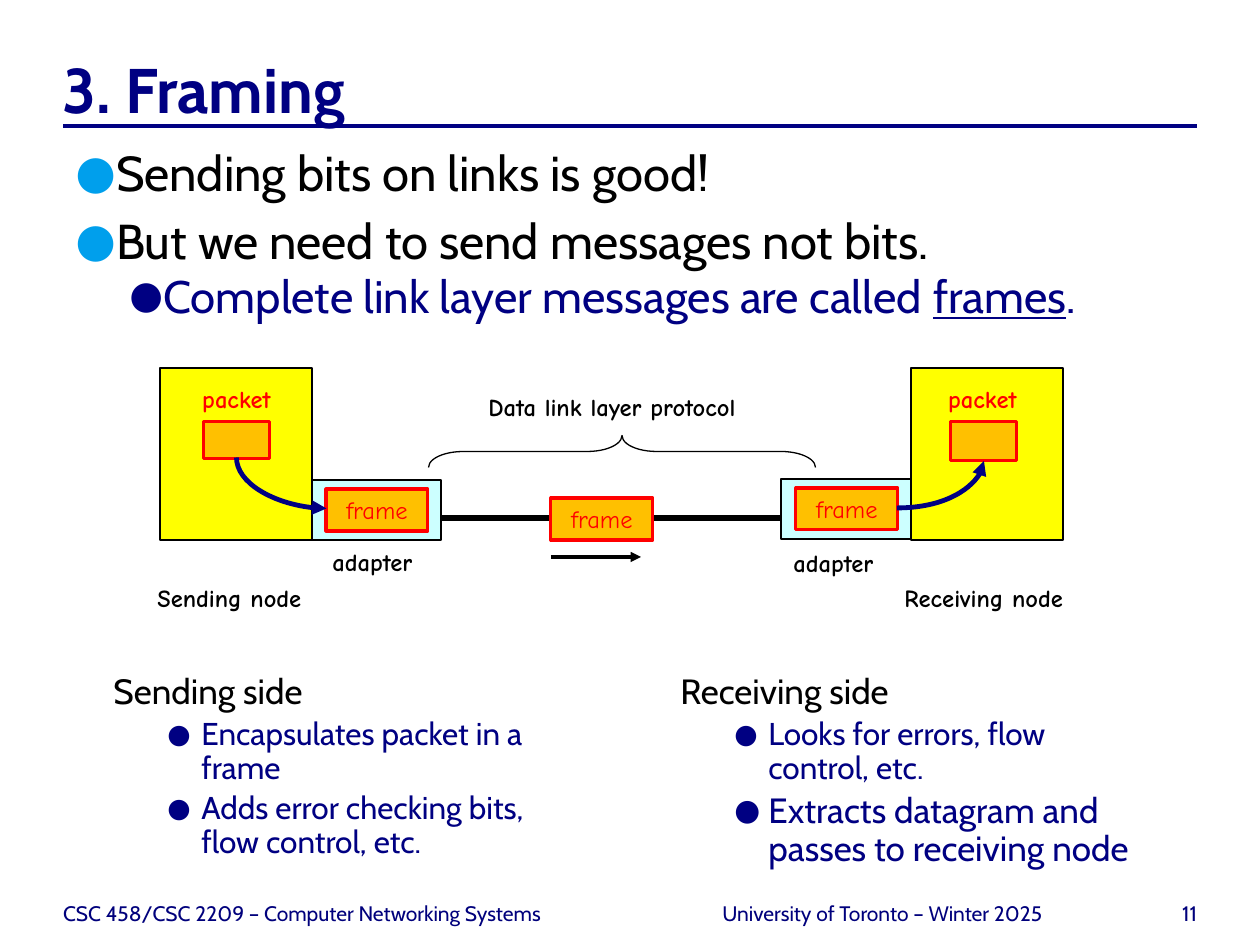
from dataclasses import dataclass
from lxml.etree import SubElement
from pptx import Presentation
from pptx.dml.color import RGBColor
from pptx.enum.shapes import MSO_CONNECTOR as Link, MSO_SHAPE as Shape
from pptx.enum.text import MSO_ANCHOR as Anchor, MSO_AUTO_SIZE as AutoSize, PP_ALIGN as Align
from pptx.oxml.ns import qn
from pptx.util import Pt

PX_PER_INCH = 126


def px(length):
    return round(length * 914400 / PX_PER_INCH)


@dataclass(frozen=True)
class Theme:
    text_font: str = "Cabin"
    label_font: str = "Comic Neue"
    navy: str = "000082"
    footer: str = "00007C"
    black: str = "000000"
    bullet: str = "009FEC"
    node: str = "FFFF00"
    adapter: str = "CCFFFF"
    packet: str = "FFC000"
    red: str = "FF0000"
    title_size: int = 36
    lead_size: int = 28
    point_size: int = 26
    side_size: int = 20
    detail_size: int = 18
    label_size: int = 14
    footer_size: int = 12
    thin: float = 0.75
    medium: float = 1.75
    rule: float = 2.25
    curve: float = 2.75
    thick: float = 3


@dataclass(frozen=True)
class Level:
    margin: int = 0
    hang: int = 0
    color: str = ""
    bullet: str = ""
    bullet_size: int = 0


class SlideBuilder:
    def __init__(self, page, theme):
        self.page = page
        self.theme = theme
        self.lead = Level(38, 38, theme.black, theme.bullet, 95)
        self.point = Level(88, 34, theme.navy, theme.navy, 85)
        self.heading = Level(color=theme.black)

    def style(self, para, font, size, color, bold=False):
        for span in para.runs:
            span.font.name = font
            span.font.size = Pt(size)
            span.font.bold = bold
            span.font.color.rgb = RGBColor.from_string(color)

    def frame_box(self, left, top, width, height):
        box = self.page.shapes.add_textbox(px(left), px(top), px(width), px(height))
        box.text_frame.word_wrap = True
        return box.text_frame

    def flush_text(self, place, text, size, color, align=Align.LEFT, bold=False, inset=0):
        frame = self.frame_box(*place)
        frame.margin_left = frame.margin_right = 0
        frame.margin_top = px(inset)
        frame.margin_bottom = 0
        frame.vertical_anchor = Anchor.BOTTOM
        frame.text = text
        para = frame.paragraphs[0]
        para.alignment = align
        self.style(para, self.theme.text_font, size, color, bold)

    def label(self, place, text, color=None, centered=False):
        frame = self.frame_box(*place)
        frame.auto_size = AutoSize.SHAPE_TO_FIT_TEXT
        frame.word_wrap = not centered
        frame.text = text
        para = frame.paragraphs[0]
        para.alignment = Align.CENTER if centered else Align.LEFT
        self.style(para, self.theme.label_font, self.theme.label_size,
                   color or self.theme.black, True)

    def outline(self, place, items):
        frame = self.frame_box(*place)
        for index, (level, size, spacing, parts) in enumerate(items):
            para = frame.paragraphs[0] if index == 0 else frame.add_paragraph()
            for number, part in enumerate(parts):
                span = para.add_run()
                span.text = part
                span.font.underline = number % 2 == 1
            self.style(para, self.theme.text_font, size, level.color)
            para.line_spacing = spacing
            para.space_before = Pt(size * 0.2)
            if level.bullet:
                self.bullet(para, level)

    def bullet(self, para, level):
        para.level = 1 if level is self.point else 0
        props = para._p.get_or_add_pPr()
        props.set("marL", str(px(level.margin)))
        props.set("indent", str(-px(level.hang)))
        color = SubElement(props, qn("a:buClr"))
        SubElement(color, qn("a:srgbClr"), val=level.bullet)
        SubElement(props, qn("a:buSzPct"), val=str(level.bullet_size * 1000))
        SubElement(props, qn("a:buFont"), typeface=self.theme.text_font)
        SubElement(props, qn("a:buChar"), char="●")

    def rectangle(self, place, fill, line, weight, text=""):
        box = self.page.shapes.add_shape(Shape.RECTANGLE, *map(px, place))
        box.shadow.inherit = False
        box.fill.solid()
        box.fill.fore_color.rgb = RGBColor.from_string(fill)
        box.line.color.rgb = RGBColor.from_string(line)
        box.line.width = Pt(weight)
        if text:
            frame = box.text_frame
            frame.word_wrap = False
            frame.vertical_anchor = Anchor.MIDDLE
            frame.text = text
            frame.paragraphs[0].alignment = Align.CENTER
            self.style(frame.paragraphs[0], self.theme.label_font, self.theme.label_size, line)

    def packet(self, place, text=""):
        self.rectangle(place, self.theme.packet, self.theme.red, self.theme.medium, text)

    def brace(self, place):
        brace = self.page.shapes.add_shape(Shape.LEFT_BRACE, *map(px, place))
        brace.shadow.inherit = False
        brace.rotation = 90
        brace.adjustments[0] = 1.08
        brace.adjustments[1] = 0.5
        brace.fill.background()
        brace.line.color.rgb = RGBColor.from_string(self.theme.black)
        brace.line.width = Pt(self.theme.thin)

    def line(self, ends, color, weight, arrow=False, curved=False, turn=0):
        kind = Link.CURVE if curved else Link.STRAIGHT
        link = self.page.shapes.add_connector(kind, *map(px, ends))
        link.line.color.rgb = RGBColor.from_string(color)
        link.line.width = Pt(weight)
        props = link._element.spPr
        if curved:
            props.find(qn("a:prstGeom")).set("prst", "curvedConnector2")
        if turn:
            props.find(qn("a:xfrm")).set("rot", str(turn * 60000))
        if arrow:
            SubElement(link.line._get_or_add_ln(), qn("a:tailEnd"), type="triangle")
        SubElement(props, qn("a:effectLst"))


def main():
    deck = Presentation()
    deck.slide_width, deck.slide_height = px(1260), px(945)
    theme = Theme()
    slide = SlideBuilder(deck.slides.add_slide(deck.slide_layouts[6]), theme)

    slide.line((63, 126, 1197, 126), theme.navy, theme.rule)
    slide.flush_text((63, 42, 1134, 84), "3. Framing", theme.title_size, theme.navy,
                     bold=True, inset=6)
    slide.outline((63, 136, 1134, 200), [
        (slide.lead, theme.lead_size, 1.0, ["Sending bits on links is good!"]),
        (slide.lead, theme.lead_size, 1.0, ["But we need to send messages not bits."]),
        (slide.point, theme.point_size, 0.8,
         ["Complete link layer messages are called ", "frames", "."]),
    ])

    slide.line((440, 518, 781, 518), theme.black, theme.thick)
    for left, top in ((311, 480), (781, 479)):
        slide.rectangle((left, top, 130, 60), theme.adapter, theme.black, theme.thin)
        slide.packet((left + 15, top + 9, 102, 42), "frame")
    for left in (160, 911):
        slide.rectangle((left, 368, 152, 172), theme.node, theme.black, theme.thin)
    slide.packet((204, 422, 66, 37))
    slide.packet((951, 422, 66, 39))
    slide.packet((551, 498, 102, 42), "frame")
    slide.brace((606, 258, 32, 387))

    for left in (189, 935):
        slide.label((left, 378, 95, 43), "packet", theme.red, centered=True)
    for place, text in (
        ((145, 577, 209, 84), "Sending node"),
        ((892, 577, 199, 84), "Receiving node"),
        ((320, 541, 126, 84), "adapter"),
        ((781, 542, 126, 84), "adapter"),
        ((476, 386, 290, 84), "Data link layer protocol"),
    ):
        slide.label(place, text)

    slide.line((897, 508, 984, 461), theme.navy, theme.curve, arrow=True, curved=True)
    slide.line((307, 438, 256, 528), theme.navy, theme.curve, arrow=True, curved=True, turn=270)
    slide.line((551, 557, 641, 557), theme.black, theme.medium, arrow=True)

    for left, heading, first, second, second_size in (
        (101, "Sending side", "Encapsulates packet in a frame",
         "Adds error checking bits, flow control, etc.", theme.detail_size),
        (668, "Receiving side", "Looks for errors, flow control, etc.",
         "Extracts datagram and passes to receiving node", theme.side_size),
    ):
        slide.outline((left, 668, 496, 218), [
            (slide.heading, theme.side_size, 0.9, [heading]),
            (slide.point, theme.detail_size, 0.9, [first]),
            (slide.point, second_size, 0.9, [second]),
        ])

    for left, width, text, align in (
        (63, 609, "CSC 458/CSC 2209 – Computer Networking Systems", Align.LEFT),
        (683, 399, "University of Toronto – Winter 2025", Align.CENTER),
        (1092, 105, "11", Align.RIGHT),
    ):
        slide.flush_text((left, 876, width, 50), text, theme.footer_size, theme.footer, align)

    deck.save("out.pptx")


if __name__ == "__main__":
    main()
